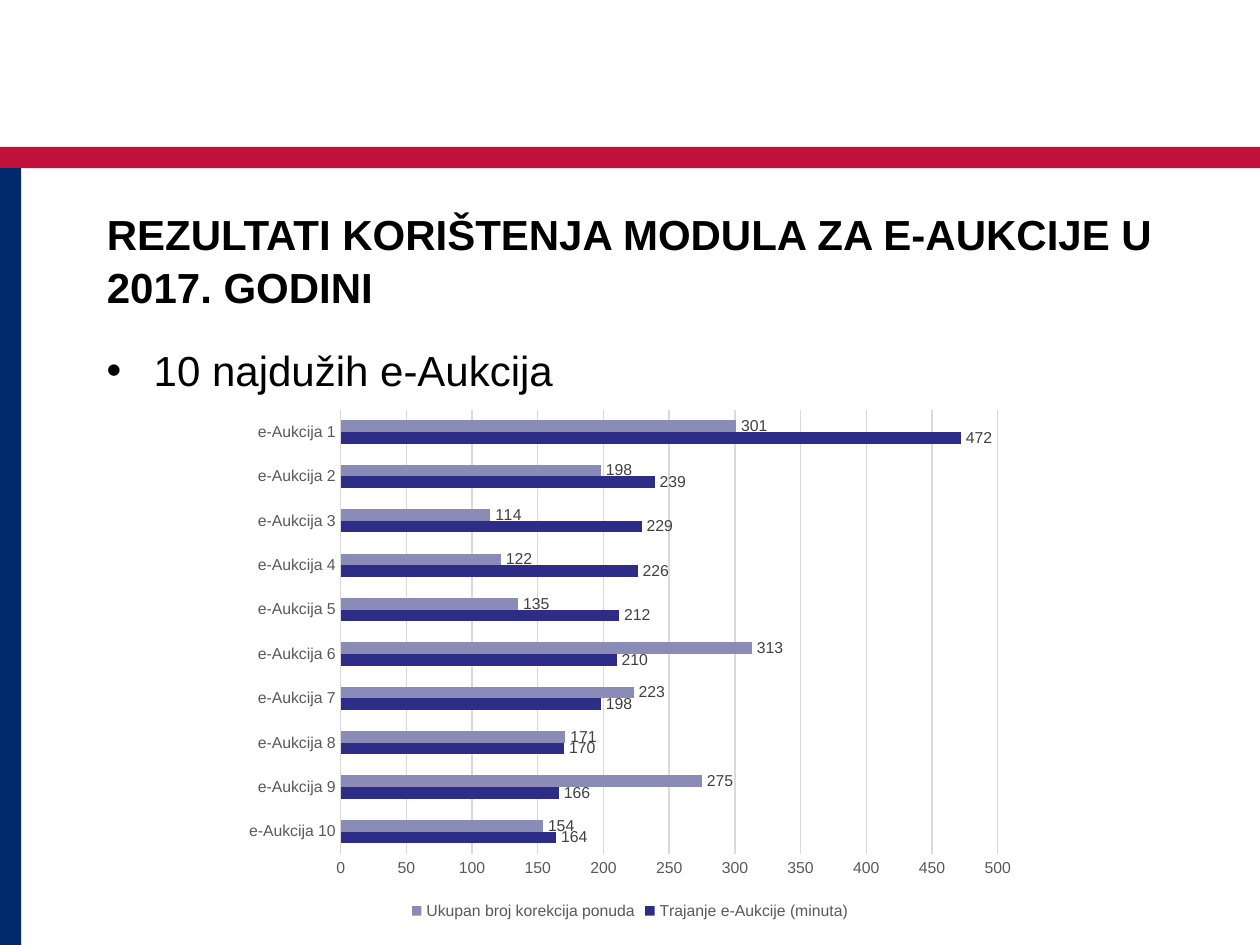
from lxml.etree import SubElement
from pptx import Presentation
from pptx.chart.data import CategoryChartData
from pptx.dml.color import RGBColor
from pptx.enum.chart import XL_CHART_TYPE, XL_LABEL_POSITION, XL_LEGEND_POSITION, XL_TICK_MARK
from pptx.enum.shapes import MSO_SHAPE
from pptx.enum.text import MSO_ANCHOR, MSO_AUTO_SIZE, PP_ALIGN
from pptx.oxml.ns import qn
from pptx.util import Cm, Pt

FONT = "Arial"
BLACK = RGBColor(0x00, 0x00, 0x00)
RED = RGBColor(0xC2, 0x11, 0x3A)
NAVY = RGBColor(0x00, 0x2A, 0x6C)
INDIGO = RGBColor(0x2D, 0x2D, 0x88)
LAVENDER = RGBColor(0x8B, 0x8B, 0xB7)
AXIS_GRAY = RGBColor(0x59, 0x59, 0x59)
LABEL_GRAY = RGBColor(0x40, 0x40, 0x40)
GRID_GRAY = RGBColor(0xD9, 0xD9, 0xD9)

TITLE = "REZULTATI KORIŠTENJA MODULA ZA E-AUKCIJE U 2017. GODINI"
BULLET = "10 najdužih e-Aukcija"
CATEGORIES = [f"e-Aukcija {number}" for number in range(10, 0, -1)]
SERIES = [
    ("Trajanje e-Aukcije (minuta)", INDIGO,
     (164, 166, 170, 198, 210, 212, 226, 229, 239, 472)),
    ("Ukupan broj korekcija ponuda", LAVENDER,
     (154, 275, 171, 223, 313, 135, 122, 114, 198, 301)),
]
# left, top, width, height in centimetres
BANDS = [
    ((0, 2.96, 25.4, 0.43), RED),
    ((0, 3.39, 0.43, 15.66), NAVY),
]
TITLE_BOX = (1.9, 4.02, 21.6, 1.7)
BODY_BOX = (1.9, 6.77, 21.6, 10.8)
CHART_BOX = (4.7, 8.05, 16, 10.6)


def lengths(box):
    return [Cm(value) for value in box]


def style_font(font, size, color, bold=False):
    font.name = FONT
    font.size = Pt(size)
    font.bold = bold
    font.color.rgb = color


def write_text(text_frame, text, bold=False):
    """Write one top-anchored, left-aligned paragraph and return it."""
    text_frame.word_wrap = True
    text_frame.auto_size = MSO_AUTO_SIZE.NONE
    text_frame.vertical_anchor = MSO_ANCHOR.TOP
    paragraph = text_frame.paragraphs[0]
    paragraph.alignment = PP_ALIGN.LEFT
    paragraph.line_spacing = 1.05
    run = paragraph.add_run()
    run.text = text
    style_font(run.font, 24, BLACK, bold)
    return paragraph


def add_bullet(paragraph, indent):
    properties = paragraph._p.get_or_add_pPr()
    properties.set("marL", str(indent))
    properties.set("indent", str(-indent))
    SubElement(properties, qn("a:buFont"), typeface=FONT)
    SubElement(properties, qn("a:buChar"), char="•")


def style_line(line, color):
    line.color.rgb = color
    line.width = Pt(0.75)


def add_auction_chart(slide):
    data = CategoryChartData()
    data.categories = CATEGORIES
    for name, _, values in SERIES:
        data.add_series(name, values)
    chart = slide.shapes.add_chart(
        XL_CHART_TYPE.BAR_CLUSTERED, *lengths(CHART_BOX), data).chart
    chart.has_title = False
    style_font(chart.font, 10, BLACK)

    chart.has_legend = True
    chart.legend.position = XL_LEGEND_POSITION.BOTTOM
    chart.legend.include_in_layout = False
    style_font(chart.legend.font, 9, AXIS_GRAY)

    for axis in (chart.category_axis, chart.value_axis):
        axis.major_tick_mark = axis.minor_tick_mark = XL_TICK_MARK.NONE
        style_font(axis.tick_labels.font, 9, AXIS_GRAY)
    style_line(chart.category_axis.format.line, GRID_GRAY)
    value_axis = chart.value_axis
    value_axis.minimum_scale, value_axis.maximum_scale = 0, 500
    value_axis.major_unit = 50
    value_axis.format.line.fill.background()
    style_line(value_axis.major_gridlines.format.line, GRID_GRAY)

    plot = chart.plots[0]
    plot.gap_width = 182
    plot.overlap = 0
    plot.vary_by_categories = False
    for series, (_, color, _) in zip(plot.series, SERIES):
        series.format.fill.solid()
        series.format.fill.fore_color.rgb = color
        labels = series.data_labels
        labels.show_value = True
        labels.position = XL_LABEL_POSITION.OUTSIDE_END
        style_font(labels.font, 9, LABEL_GRAY)


def main():
    presentation = Presentation()
    presentation.slide_width, presentation.slide_height = Cm(25.4), Cm(19.05)
    slide = presentation.slides.add_slide(presentation.slide_layouts[5])

    for box, color in BANDS:
        band = slide.shapes.add_shape(MSO_SHAPE.RECTANGLE, *lengths(box))
        band.shadow.inherit = False
        band.fill.solid()
        band.fill.fore_color.rgb = color
        band.line.fill.background()

    title = slide.shapes.title
    title.left, title.top, title.width, title.height = lengths(TITLE_BOX)
    write_text(title.text_frame, TITLE, bold=True)

    body = slide.shapes.add_textbox(*lengths(BODY_BOX))
    add_bullet(write_text(body.text_frame, BULLET), Cm(0.95))

    add_auction_chart(slide)
    presentation.save("out.pptx")


if __name__ == "__main__":
    main()
